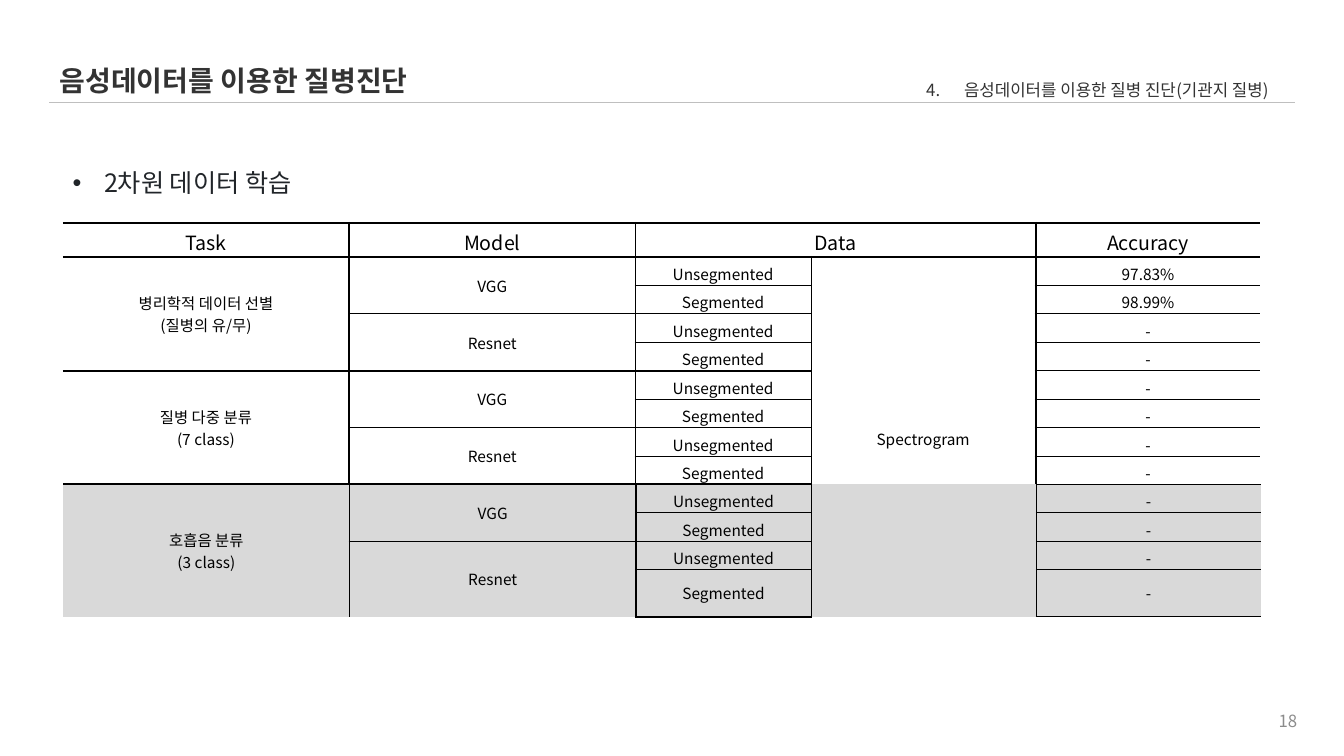
from lxml import etree
from pptx import Presentation
from pptx.dml.color import RGBColor
from pptx.enum.shapes import MSO_CONNECTOR
from pptx.enum.text import MSO_ANCHOR, MSO_AUTO_SIZE, PP_ALIGN
from pptx.oxml.ns import qn
from pptx.util import Pt

STRAIGHT = MSO_CONNECTOR.STRAIGHT
TOP, MIDDLE, BOTTOM = MSO_ANCHOR.TOP, MSO_ANCHOR.MIDDLE, MSO_ANCHOR.BOTTOM
GROW, FIXED = MSO_AUTO_SIZE.SHAPE_TO_FIT_TEXT, MSO_AUTO_SIZE.NONE
LEFT, CENTER, RIGHT = PP_ALIGN.LEFT, PP_ALIGN.CENTER, PP_ALIGN.RIGHT

COLORS = {
    "ink": "333333",
    "bullet": "212529",
    "page": "8C8C8C",
    "rule": "BFBFBF",
    "table": "000000",
    "shade": "D9D9D9",
}
FONT = "Noto Sans CJK KR"
THICK, THIN = 1.5, 0.5
GROUP_ROWS = 4
COLUMN_WIDTHS = (204.5, 204.5, 125.3, 160.6, 160.6)
HEADER_HEIGHT, ROW_HEIGHT, LAST_HEIGHT = 24.4, 20.35, 33.4
HEADINGS = ("Task", "Model", "Data", None, "Accuracy")
MODELS = ("VGG", "Resnet")
SEGMENTATION = ("Unsegmented", "Segmented")


def set_all(target, values):
    for name, value in values.items():
        setattr(target, name, value)


class SlideBuilder:
    def __init__(self, slide, font, colors):
        self.slide = slide
        self.font = font
        self.colors = colors

    def color(self, name):
        return RGBColor.from_string(self.colors[name])

    def put_lines(self, frame, lines, size, color, bold=False, align=LEFT, spacing=1.0):
        frame.text = "\n".join(lines)
        for paragraph in frame.paragraphs:
            set_all(paragraph, {"alignment": align, "line_spacing": spacing,
                                "space_before": Pt(0)})
            for run in paragraph.runs:
                set_all(run.font, {"size": Pt(size), "bold": bold, "name": self.font})
                run.font.color.rgb = self.color(color)
                etree.SubElement(run.font._element, qn("a:ea"), typeface=self.font)

    def text(self, box, line, size, color, holder=None, anchor=TOP, wrap=True,
             fit=GROW, **style):
        left, top, width, height = map(Pt, box)
        if holder is None:
            holder = self.slide.shapes.add_textbox(left, top, width, height)
        set_all(holder, {"left": left, "top": top, "width": width, "height": height})
        frame = holder.text_frame
        set_all(frame, {"word_wrap": wrap, "auto_size": fit, "vertical_anchor": anchor,
                        "margin_left": Pt(7.2), "margin_right": Pt(7.2),
                        "margin_top": Pt(3.6), "margin_bottom": Pt(3.6)})
        self.put_lines(frame, [line], size, color, **style)
        return frame.paragraphs[0]

    def mark(self, paragraph, indent, tag, **values):
        properties = paragraph._p.get_or_add_pPr()
        properties.set("marL", str(Pt(indent)))
        properties.set("indent", str(-Pt(indent)))
        etree.SubElement(properties, qn(tag), **values)

    def rule(self, left, right, y, color, width):
        line = self.slide.shapes.add_connector(STRAIGHT, Pt(left), Pt(y), Pt(right), Pt(y))
        line.line.color.rgb = self.color(color)
        line.line.width = Pt(width)
        etree.SubElement(line._element.spPr, qn("a:effectLst"))

    def border(self, cell, widths):
        properties = cell._tc.get_or_add_tcPr()
        for tag, width in zip(("a:lnL", "a:lnR", "a:lnT", "a:lnB"), widths):
            edge = etree.SubElement(properties, qn(tag), w=str(Pt(width or 0)))
            if width:
                paint = etree.SubElement(edge, qn("a:solidFill"))
                etree.SubElement(paint, qn("a:srgbClr"), val=self.colors["table"])
            else:
                etree.SubElement(edge, qn("a:noFill"))

    def table(self, left, top, heights, rows, spans, has_header, shade=None):
        body_count = len(rows) - has_header
        seam = body_count if has_header else 0
        row_spans = (GROUP_ROWS, 2, 1, body_count, 1)

        def horizontal(edge, column):
            if edge < 0:
                return THICK
            if edge % row_spans[column] or (column == 3 and edge == seam):
                return None
            grouped = column < 3 and edge % GROUP_ROWS == 0
            return THICK if grouped or (has_header and edge == 0) else THIN

        def vertical(edge, header):
            if edge in (0, len(COLUMN_WIDTHS)):
                return None
            if edge == 3:
                return None if header else THIN
            return THIN if edge == 4 and not has_header else THICK

        grid = self.slide.shapes.add_table(
            len(rows), len(COLUMN_WIDTHS), Pt(left), Pt(top),
            Pt(sum(COLUMN_WIDTHS)), Pt(sum(heights))).table
        set_all(grid, {"first_row": False, "horz_banding": False})
        for column, width in zip(grid.columns, COLUMN_WIDTHS):
            column.width = Pt(width)
        for row, height in zip(grid.rows, heights):
            row.height = Pt(height)
        for row, column, height, width in spans:
            grid.cell(row, column).merge(grid.cell(row + height - 1, column + width - 1))
        for r, values in enumerate(rows):
            header = has_header and r == 0
            for c, value in enumerate(values):
                cell = grid.cell(r, c)
                edge = r - has_header
                self.border(cell, (vertical(c, header), vertical(c + 1, header),
                                   horizontal(edge, c), horizontal(edge + 1, c)))
                if shade:
                    cell.fill.solid()
                    cell.fill.fore_color.rgb = self.color(shade)
                else:
                    cell.fill.background()
                roomy = cell.is_merge_origin or heights[r] == LAST_HEIGHT
                set_all(cell, {"vertical_anchor": MIDDLE, "margin_top": Pt(3.6),
                               "margin_bottom": Pt(3.6 if roomy and not header else 0)})
                if value:
                    self.put_lines(cell.text_frame, value.split("\n"),
                                   14 if header else 11, "table", align=CENTER)
        return grid


def task_rows(task, accuracies, data=None):
    rows = []
    for i, accuracy in enumerate(accuracies):
        rows.append((None if i else task, None if i % 2 else MODELS[i // 2],
                     SEGMENTATION[i % 2], None if i else data, accuracy))
    return rows


def task_spans(first_row):
    return [(first_row, 0, GROUP_ROWS, 1), (first_row, 1, 2, 1), (first_row + 2, 1, 2, 1)]


def main():
    presentation = Presentation()
    set_all(presentation, {"slide_width": Pt(960), "slide_height": Pt(540)})
    slide = presentation.slides.add_slide(presentation.slide_layouts[1])
    builder = SlideBuilder(slide, FONT, COLORS)

    builder.text((717.8, 500.4, 216, 28.8), "18", 12, "page", anchor=MIDDLE,
                 fit=FIXED, align=RIGHT)
    builder.rule(35.3, 925.2, 73.4, "rule", 0.5)
    builder.text((35.3, 41.8, 288.7, 31.7), "음성데이터를 이용한 질병진단", 20, "ink",
                 holder=slide.shapes.title, wrap=False, bold=True)
    section = builder.text((654.5, 46.1, 286.6, 25.9),
                           "음성데이터를 이용한 질병 진단(기관지 질병)", 12, "ink", spacing=1.5)
    builder.mark(section, 27, "a:buAutoNum", type="arabicPeriod", startAt="4")
    topic = builder.text((44.6, 94.3, 480.2, 43.9), "2차원 데이터 학습", 18, "bullet",
                         holder=slide.placeholders[1], spacing=2.0)
    builder.mark(topic, 22.5, "a:buChar", char="•")

    pathology = task_rows("병리학적 데이터 선별\n(질병의 유/무)",
                          ("97.83%", "98.99%", "-", "-"), "Spectrogram")
    diseases = task_rows("질병 다중 분류\n(7 class)", ("-",) * GROUP_ROWS)
    results = builder.table(
        44.9, 159.1, [HEADER_HEIGHT] + [ROW_HEIGHT] * 8,
        [HEADINGS] + pathology + diseases,
        [(0, 2, 1, 2), (1, 3, 8, 1)] + task_spans(1) + task_spans(5), True)
    set_all(results.cell(1, 3), {"vertical_anchor": BOTTOM, "margin_bottom": Pt(24.5)})

    builder.table(
        45.2, 345.8, [ROW_HEIGHT] * 3 + [LAST_HEIGHT],
        task_rows("호흡음 분류\n(3 class)", ("-",) * GROUP_ROWS),
        [(0, 3, GROUP_ROWS, 1)] + task_spans(0), False, "shade")
    presentation.save("out.pptx")


if __name__ == "__main__":
    main()
